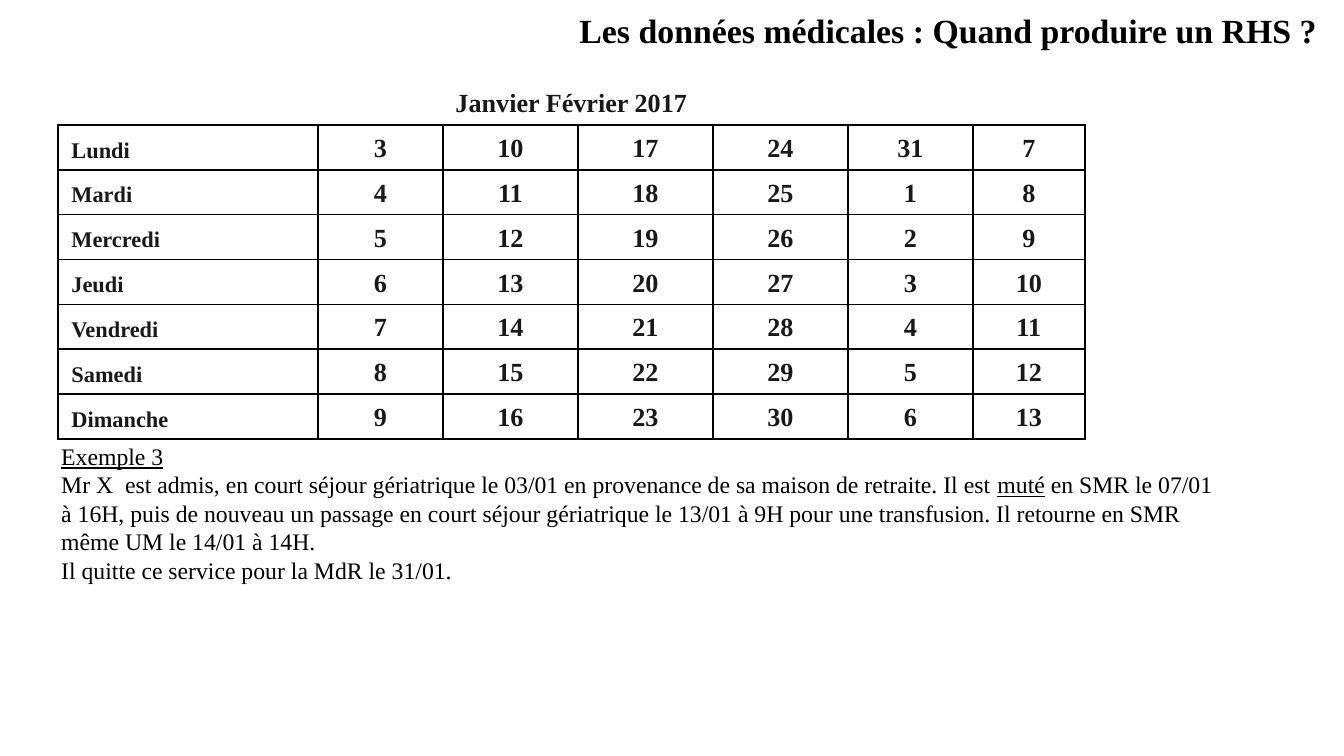
"""Build the slide on when to produce an RHS, with its calendar and example."""
import pptx
import pptx.dml.color
import pptx.enum.text
import pptx.oxml
import pptx.oxml.ns
import pptx.util

ALIGN = pptx.enum.text.PP_ALIGN
ANCHOR = pptx.enum.text.MSO_ANCHOR
AUTO_SIZE = pptx.enum.text.MSO_AUTO_SIZE

TITLE = "Les données médicales : Quand produire un RHS ?"
MONTHS = "Janvier Février 2017"
DAYS = ["Lundi", "Mardi", "Mercredi", "Jeudi", "Vendredi", "Samedi", "Dimanche"]
FIRST_DATE, MONTH_LENGTH, WEEKS = 3, 31, 6
EXAMPLE = [
    [("Exemple 3", True)],
    [
        ("Mr X  est admis, en court séjour gériatrique le 03/01 en provenance "
         "de sa maison de retraite. Il est ", False),
        ("muté", True),
        (" en SMR le 07/01 à 16H, puis de nouveau un passage en court séjour "
         "gériatrique le 13/01 à 9H pour une transfusion. Il retourne en SMR "
         "même UM le 14/01 à 14H.", False),
    ],
    [("Il quitte ce service pour la MdR le 31/01.", False)],
]

COLORS = {"text": "000000", "calendar": "191919", "border": "000000"}
FONT = "Times New Roman"
PX = 914400 / 134.4
SLIDE_SIZE = (1344, 756)
TITLE_BOX = (566, 3, 773, 55)
EXAMPLE_BOX = (48, 435, 1187, 157)
CALENDAR_LEFT, CALENDAR_TOP, ROW_HEIGHT = 58, 80, 43
COLUMN_WIDTHS = [260, 125, 135, 135, 135, 125, 112]
HANGING_INDENT = 51
PLAIN_TABLE_STYLE = "{2D5ABB26-0587-4C30-8999-92F81FD0307C}"


def px(length):
    return pptx.util.Emu(round(length * PX))


def set_attributes(target, values):
    for name, value in values.items():
        setattr(target, name, value)


def add_run(paragraph, text, size, color, **styles):
    run = paragraph.add_run()
    run.text = text
    set_attributes(run.font, {"name": FONT, "size": pptx.util.Pt(size), **styles})
    run.font.color.rgb = pptx.dml.color.RGBColor.from_string(COLORS[color])


def add_borders(cell, sides):
    properties = cell._tc.get_or_add_tcPr()
    for side in "LRTB":
        if side in sides:
            fill = f'<a:solidFill><a:srgbClr val="{COLORS["border"]}"/></a:solidFill>'
        else:
            fill = "<a:noFill/>"
        properties.append(pptx.oxml.parse_xml(
            f'<a:ln{side} {pptx.oxml.ns.nsdecls("a")} w="12700">{fill}</a:ln{side}>'))


def add_title(slide):
    title = slide.shapes.title
    set_attributes(title, dict(zip(("left", "top", "width", "height"), map(px, TITLE_BOX))))
    set_attributes(title.text_frame, {
        "word_wrap": False,
        "auto_size": AUTO_SIZE.SHAPE_TO_FIT_TEXT,
        "vertical_anchor": ANCHOR.TOP,
    })
    paragraph = title.text_frame.paragraphs[0]
    paragraph.alignment = ALIGN.LEFT
    add_run(paragraph, TITLE, 18.1, "text", bold=True)


def fill_cell(cell, text, size, alignment):
    cell.vertical_anchor = ANCHOR.BOTTOM
    paragraph = cell.text_frame.paragraphs[0]
    paragraph.alignment = alignment
    properties = paragraph._p.get_or_add_pPr()
    properties.set("marL", str(px(HANGING_INDENT)))
    properties.set("indent", str(px(-HANGING_INDENT)))
    add_run(paragraph, text, size, "calendar", bold=True)


def add_calendar(slide):
    row_count, column_count = len(DAYS) + 1, WEEKS + 1
    frame = slide.shapes.add_table(
        row_count, column_count, px(CALENDAR_LEFT), px(CALENDAR_TOP),
        px(sum(COLUMN_WIDTHS)), px(ROW_HEIGHT * row_count))
    table = frame.table
    set_attributes(table, {"first_row": False, "horz_banding": False})
    table._tbl.tblPr.find(pptx.oxml.ns.qn("a:tableStyleId")).text = PLAIN_TABLE_STYLE
    for column, width in zip(table.columns, COLUMN_WIDTHS):
        column.width = px(width)
    for index, row in enumerate(table.rows):
        row.height = px(ROW_HEIGHT)
        for cell in row.cells:
            add_borders(cell, "LRTB" if index else "B")
            cell.fill.background()

    table.cell(0, 0).merge(table.cell(0, WEEKS))
    fill_cell(table.cell(0, 0), MONTHS, 14, ALIGN.CENTER)
    for index, day in enumerate(DAYS):
        fill_cell(table.cell(index + 1, 0), day, 12, ALIGN.LEFT)
        for week in range(WEEKS):
            date = (FIRST_DATE + 7 * week + index - 1) % MONTH_LENGTH + 1
            fill_cell(table.cell(index + 1, week + 1), str(date), 14, ALIGN.CENTER)


def add_example(slide):
    text_frame = slide.shapes.add_textbox(*map(px, EXAMPLE_BOX)).text_frame
    set_attributes(text_frame, {"word_wrap": True, "auto_size": AUTO_SIZE.SHAPE_TO_FIT_TEXT})
    for index, runs in enumerate(EXAMPLE):
        paragraph = text_frame.add_paragraph() if index else text_frame.paragraphs[0]
        for text, underline in runs:
            add_run(paragraph, text, 12.7, "text", underline=underline)


def main():
    presentation = pptx.Presentation()
    presentation.slide_width, presentation.slide_height = map(px, SLIDE_SIZE)
    slide = presentation.slides.add_slide(presentation.slide_layouts.get_by_name("Title Only"))
    add_title(slide)
    add_calendar(slide)
    add_example(slide)
    presentation.save("out.pptx")


if __name__ == "__main__":
    main()
